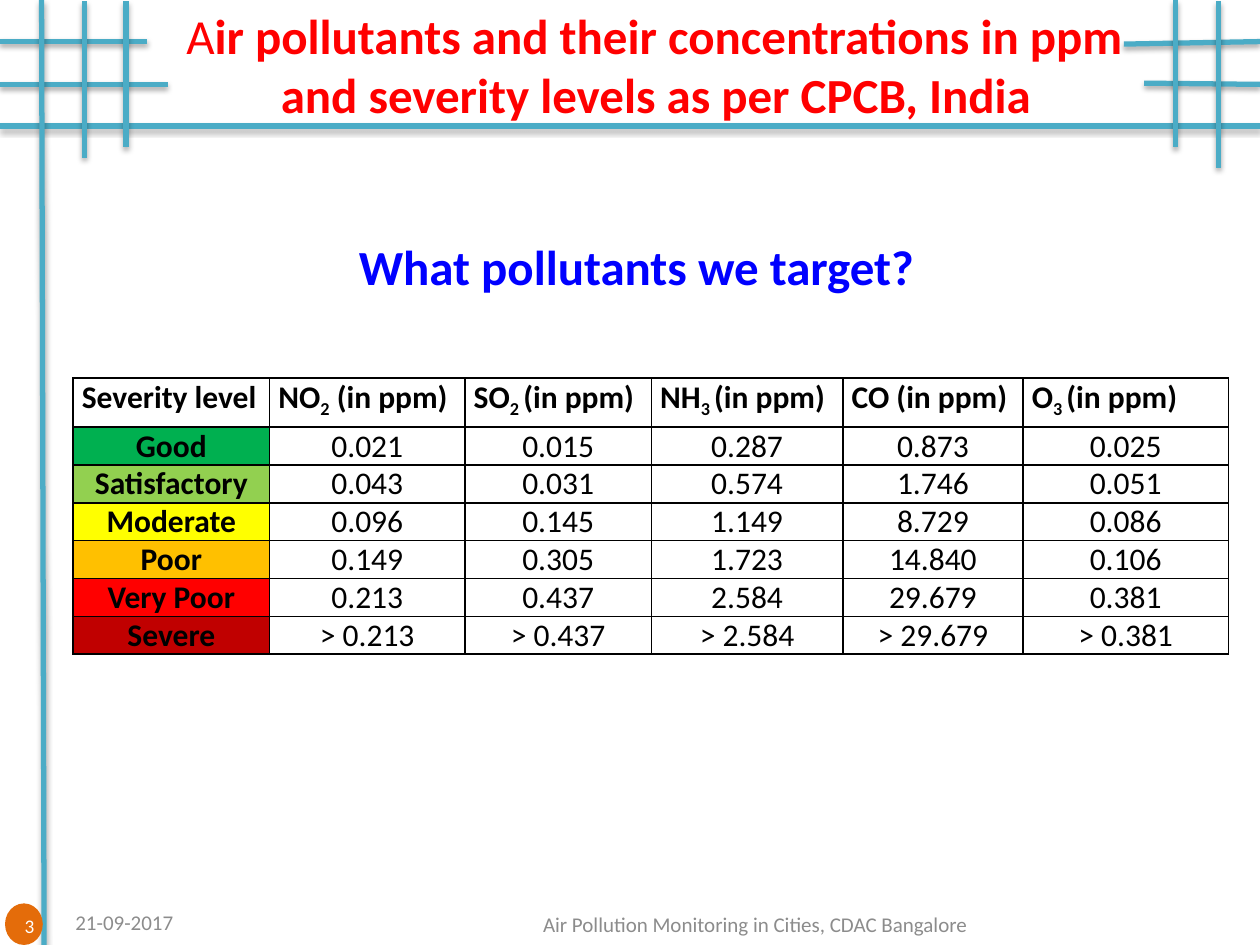
from dataclasses import dataclass
from typing import NamedTuple, Optional, Union

from lxml.etree import SubElement
from pptx import Presentation
from pptx.dml.color import RGBColor
from pptx.enum.shapes import MSO_CONNECTOR, MSO_SHAPE
from pptx.enum.text import MSO_ANCHOR, PP_ALIGN
from pptx.oxml.ns import qn
from pptx.util import Inches, Pt


@dataclass(frozen=True)
class Theme:
    font: str = "Calibri"
    grid: str = "4BACC6"
    badge: str = "E46C0A"
    title: str = "FF0000"
    question: str = "0000FF"
    footer: str = "8C8C8C"
    black: str = "000000"
    white: str = "FFFFFF"
    heading_size: int = 28
    space_size: int = 20
    table_size: int = 18
    footer_size: int = 12
    number_size: int = 11


class Run(NamedTuple):
    text: str
    size: Optional[int] = None
    bold: Optional[bool] = None
    subscript: bool = False


class GridLine(NamedTuple):
    x1: float
    y1: float
    x2: float
    y2: float


class Level(NamedTuple):
    name: str
    fill: str
    values: tuple[str, ...]


class TextBox(NamedTuple):
    left: float
    top: float
    width: float
    height: float


Content = Union[str, list[Run]]
THEME = Theme()

GRID_LINES = [
    GridLine(0, 1, 10, 1),
    GridLine(0, 0.67, 1.33, 0.67),
    GridLine(0, 0.33, 1.17, 0.33),
    GridLine(0.33, 0, 0.35, 7.5),
    GridLine(0.67, 0.01, 0.67, 1.25),
    GridLine(1, 0.01, 1, 1.17),
    GridLine(8.92, 0.35, 10, 0.33),
    GridLine(9.08, 0.66, 10, 0.67),
    GridLine(9.33, 0, 9.33, 1.17),
    GridLine(9.67, 0.01, 9.67, 1.33),
]

COLUMN_WIDTHS = [1.56, 1.55, 1.48, 1.52, 1.43, 1.63]
HEADER_HEIGHT = 0.39
ROW_HEIGHT = 0.3
HEADERS: list[Content] = [
    "Severity level",
    [Run("NO"), Run("2", subscript=True), Run(" (in ppm)")],
    [Run("SO"), Run("2 ", subscript=True), Run("(in ppm)")],
    [Run("NH"), Run("3 ", subscript=True), Run("(in ppm)")],
    "CO (in ppm)",
    [Run("O"), Run("3 ", subscript=True), Run("(in ppm)")],
]
LEVELS = [
    Level("Good", "00B050", ("0.021", "0.015", "0.287", "0.873", "0.025")),
    Level("Satisfactory", "92D050", ("0.043", "0.031", "0.574", "1.746", "0.051")),
    Level("Moderate", "FFFF00", ("0.096", "0.145", "1.149", "8.729", "0.086")),
    Level("Poor", "FFC000", ("0.149", "0.305", "1.723", "14.840", "0.106")),
    Level("Very Poor", "FF0000", ("0.213", "0.437", "2.584", "29.679", "0.381")),
    Level("Severe", "C00000", ("> 0.213", "> 0.437", "> 2.584", "> 29.679", "> 0.381")),
]


def write_text(frame, content: Content, *, size: int, color: str, bold: bool = False,
               align: PP_ALIGN = PP_ALIGN.LEFT) -> None:
    paragraph = frame.paragraphs[0]
    paragraph.alignment = align
    for part in [Run(content)] if isinstance(content, str) else content:
        if part.text == "\n":
            paragraph.add_line_break()
            continue
        run = paragraph.add_run()
        run.text = part.text
        run.font.name = THEME.font
        run.font.size = Pt(part.size or size)
        run.font.bold = bold if part.bold is None else part.bold
        run.font.color.rgb = RGBColor.from_string(color)
        if part.subscript:
            run._r.get_or_add_rPr().set("baseline", "-25000")


def add_text(slide, box: TextBox, content: Content, *, anchor: MSO_ANCHOR = MSO_ANCHOR.MIDDLE,
             wrap: bool = True, **text_format) -> None:
    frame = slide.shapes.add_textbox(*map(Inches, box)).text_frame
    frame.word_wrap = wrap
    frame.vertical_anchor = anchor
    write_text(frame, content, **text_format)


def add_grid_line(slide, line: GridLine) -> None:
    connector = slide.shapes.add_connector(MSO_CONNECTOR.STRAIGHT, *map(Inches, line))
    connector.line.color.rgb = RGBColor.from_string(THEME.grid)
    connector.line.width = Pt(3)
    effects = SubElement(connector._element.spPr, qn("a:effectLst"))
    shadow = SubElement(effects, qn("a:outerShdw"), blurRad=str(Pt(3.1)), dist=str(Pt(1.8)),
                        dir="5400000", rotWithShape="0")
    color = SubElement(shadow, qn("a:srgbClr"), val=THEME.black)
    SubElement(color, qn("a:alpha"), val="35000")


def add_badge(slide) -> None:
    badge = slide.shapes.add_shape(MSO_SHAPE.OVAL, Inches(0.04), Inches(7.17), Inches(0.3), Inches(0.33))
    badge.shadow.inherit = False
    badge.fill.solid()
    badge.fill.fore_color.rgb = RGBColor.from_string(THEME.badge)
    badge.line.fill.background()


def format_cell(cell, content: Content, *, fill: Optional[str] = None,
                anchor: MSO_ANCHOR = MSO_ANCHOR.MIDDLE, align: PP_ALIGN = PP_ALIGN.CENTER,
                bold: bool = False) -> None:
    cell.margin_left = cell.margin_right = Inches(0.07)
    cell.margin_top = cell.margin_bottom = 0
    cell.vertical_anchor = anchor
    write_text(cell.text_frame, content, size=THEME.table_size, color=THEME.black, bold=bold, align=align)
    properties = cell._tc.get_or_add_tcPr()
    for side in ("a:lnL", "a:lnR", "a:lnT", "a:lnB"):
        border = SubElement(properties, qn(side), w=str(Pt(1)))
        SubElement(SubElement(border, qn("a:solidFill")), qn("a:srgbClr"), val=THEME.black)
    if fill:
        cell.fill.solid()
        cell.fill.fore_color.rgb = RGBColor.from_string(fill)
    else:
        cell.fill.background()


def add_severity_table(slide) -> None:
    height = HEADER_HEIGHT + ROW_HEIGHT * len(LEVELS)
    table = slide.shapes.add_table(len(LEVELS) + 1, len(HEADERS), Inches(0.58), Inches(3),
                                   Inches(sum(COLUMN_WIDTHS)), Inches(height)).table
    table.first_row = table.horz_banding = False
    for column, width in zip(table.columns, COLUMN_WIDTHS):
        column.width = Inches(width)
    for index, row in enumerate(table.rows):
        row.height = Inches(ROW_HEIGHT if index else HEADER_HEIGHT)
    for column, header in enumerate(HEADERS):
        format_cell(table.cell(0, column), header, bold=True, anchor=MSO_ANCHOR.TOP, align=PP_ALIGN.JUSTIFY)
    for row, level in enumerate(LEVELS, start=1):
        format_cell(table.cell(row, 0), level.name, fill=level.fill, bold=True)
        for column, value in enumerate(level.values, start=1):
            format_cell(table.cell(row, column), value)


def main() -> None:
    """Build the slide on air pollutants and their severity levels."""
    presentation = Presentation()
    presentation.slide_width, presentation.slide_height = Inches(10), Inches(7.5)
    slide = presentation.slides.add_slide(presentation.slide_layouts[6])
    for line in GRID_LINES:
        add_grid_line(slide, line)
    add_badge(slide)
    add_text(slide, TextBox(0.5, 7.23, 2.33, 0.18), "21-09-2017",
             size=THEME.footer_size, color=THEME.footer)
    add_text(slide, TextBox(3.08, 7.25, 5.83, 0.17), "Air Pollution Monitoring in Cities, CDAC Bangalore",
             size=THEME.footer_size, color=THEME.footer, align=PP_ALIGN.CENTER)
    add_text(slide, TextBox(-0.05, 7.17, 0.42, 0.35), "3",
             size=THEME.number_size, color=THEME.white, align=PP_ALIGN.RIGHT)
    add_severity_table(slide)
    title = [Run(" ", size=THEME.space_size, bold=False), Run("A", bold=False),
             Run("ir pollutants and their concentrations in ppm "), Run("\n"),
             Run("and severity levels as per CPCB, India")]
    add_text(slide, TextBox(1.27, -0.01, 7.87, 1.04), title, wrap=False,
             size=THEME.heading_size, color=THEME.title, bold=True, align=PP_ALIGN.CENTER)
    add_text(slide, TextBox(2.75, 1.83, 5.75, 0.57), "What pollutants we target?", anchor=MSO_ANCHOR.TOP,
             size=THEME.heading_size, color=THEME.question, bold=True)
    presentation.save("out.pptx")


if __name__ == "__main__":
    main()
